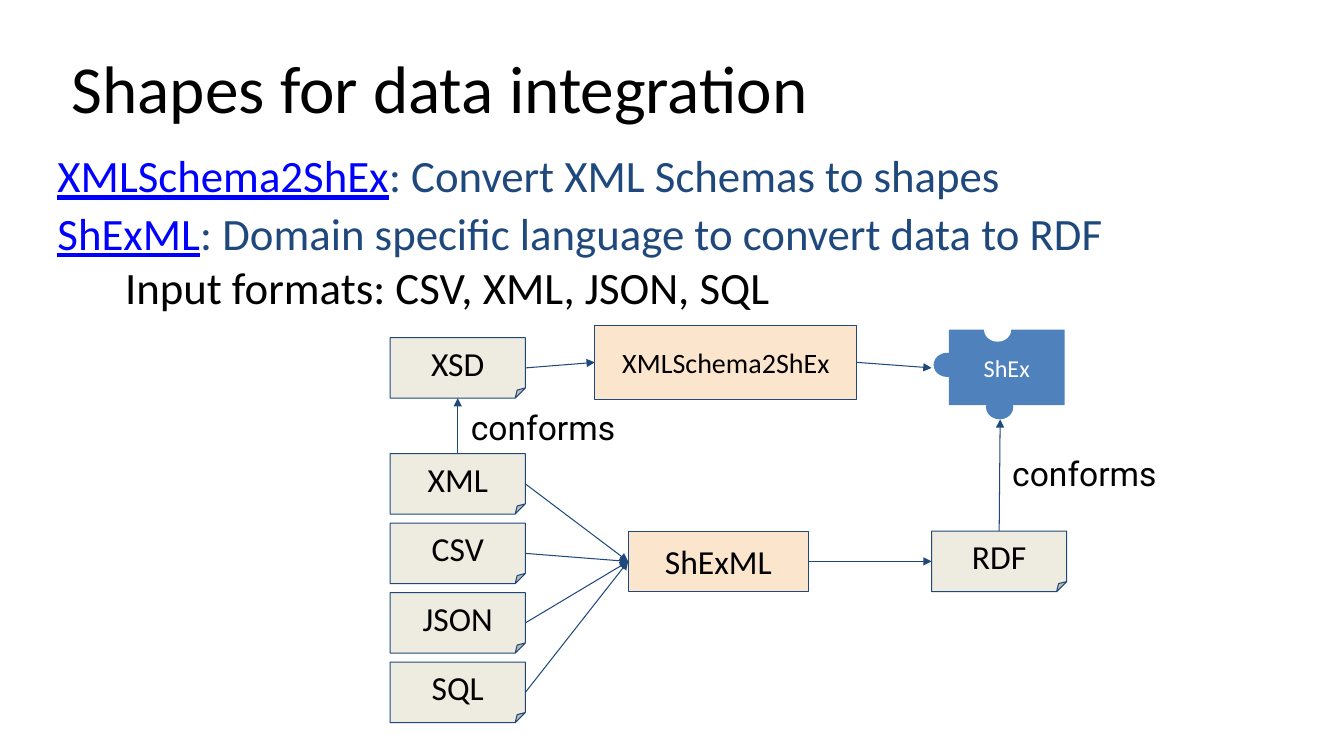
from lxml import etree
from pptx import Presentation
from pptx import util as u
from pptx.dml.color import RGBColor
from pptx.enum import shapes, text
from pptx.oxml.ns import qn

COLORS = {"ink": "000000", "link": "0000FF", "navy": "1F497D", "paper": "EEECE1",
          "tool": "FCE5CD", "puzzle": "4F81BD", "white": "FFFFFF"}
TITLE = "Shapes for data integration"
# (level, space before, [(words, color, underlined)])
BODY = [
    (0, 0, [("XMLSchema2ShEx", "link", True),
            (": Convert XML Schemas to shapes", "navy", False)]),
    (0, 6.7, [("ShExML", "link", True),
              (": Domain specific language to convert data to RDF", "navy", False)]),
    (1, 4, [("Input formats: CSV, XML, JSON, SQL", "ink", False)]),
]
INPUTS = ["XML", "CSV", "JSON", "SQL"]
DOC_W, DOC_H = 1.34, 0.6
DOC_X, RDF_X = 3.87, 9.24
XSD_Y, INPUT_Y, INPUT_PITCH, RDF_Y = 3.35, 4.5, 0.69, 5.27
# name: (left, top, width, height, size)
TOOLS = {"XMLSchema2ShEx": (5.9, 3.23, 2.6, 0.73, 20),
         "ShExML": (6.23, RDF_Y, 1.79, DOC_H, 24)}
PUZZLE_BODY = (9.41, 3.27, 1.15, 0.75)
KNOB_W, KNOB_H = 0.27, 0.24
KNOBS = [(9.78, 3.92, "puzzle"), (9.76, 3.15, "white"), (9.26, 3.5, "puzzle")]
PUZZLE_LEFT, PUZZLE_FOOT = (RDF_X, 3.65), (9.92, 4.16)
CONFORMS = [(9.91, 4.36), (4.54, 3.91)]
TOP, LEFT, BOTTOM, RIGHT = range(4)  # connection sites

prs = Presentation()
prs.slide_width, prs.slide_height = u.Inches(13.33), u.Inches(7.5)
s = prs.slides.add_slide(prs.slide_layouts[5])


def inches(*values):
    return [u.Inches(v) for v in values]


def rgb(name):
    return RGBColor.from_string(COLORS[name])


def frame(sp, across, down, anchor=text.MSO_ANCHOR.TOP):
    tf = sp.text_frame
    tf.word_wrap = True
    tf.auto_size = text.MSO_AUTO_SIZE.NONE
    tf.vertical_anchor = anchor
    tf.margin_left = tf.margin_right = u.Inches(across)
    tf.margin_top = tf.margin_bottom = u.Inches(down)
    return tf


def add_run(p, words, size, color="ink", font="Calibri", underline=False):
    r = p.add_run()
    r.text = words
    r.font.size, r.font.name = u.Pt(size), font
    r.font.color.rgb = rgb(color)
    r.font.underline = underline


def add_block(parent, kind, box, fill, outlined=True):
    sp = parent.add_shape(kind, *inches(*box))
    sp.shadow.inherit = False
    sp.fill.solid()
    sp.fill.fore_color.rgb = rgb(fill)
    if outlined:
        sp.line.color.rgb = rgb("navy")
        sp.line.width = u.Pt(0.75)
    else:
        sp.line.fill.background()
    return sp


def add_label(sp, words, size, color="ink", margins=(0.13, 0.13)):
    p = frame(sp, *margins, text.MSO_ANCHOR.MIDDLE).paragraphs[0]
    p.alignment = text.PP_ALIGN.CENTER
    add_run(p, words, size, color)


def add_document(name, left, top):
    sp = add_block(s.shapes, shapes.MSO_SHAPE.FOLDED_CORNER,
                   (left, top, DOC_W, DOC_H), "paper")
    add_label(sp, name, 24)
    return sp


def add_arrow(start, site, end, end_site=LEFT):
    """Draw an arrow from a shape to another shape or to an (x, y) point."""
    is_point = isinstance(end, tuple)
    x, y = inches(*end) if is_point else (0, 0)
    line = s.shapes.add_connector(shapes.MSO_CONNECTOR.STRAIGHT, 0, 0, x, y)
    line.begin_connect(start, site)
    if not is_point:
        line.end_connect(end, end_site)
    line.line.color.rgb = rgb("navy")
    line.line.width = u.Pt(0.75)
    sp_pr = line._element.spPr
    etree.SubElement(sp_pr.find(qn("a:ln")), qn("a:tailEnd"), type="triangle")
    etree.SubElement(sp_pr, qn("a:effectLst"))


# Title and introduction
title = s.shapes.title
title.left, title.top, title.width, title.height = inches(0.56, 0.45, 12.03, 0.98)
p = frame(title, 0.15, 0.1).paragraphs[0]
p.alignment, p.line_spacing = text.PP_ALIGN.LEFT, 0.9
add_run(p, TITLE, 48)

tf = frame(s.shapes.add_textbox(*inches(0.42, 1.43, 12.41, 1.63)), 0.15, 0.1)
for i, (level, before, runs) in enumerate(BODY):
    p = tf.add_paragraph() if i else tf.paragraphs[0]
    p.level, p.line_spacing, p.space_before = level, 0.9, u.Pt(before)
    p._p.get_or_add_pPr().set("marL", str(u.Inches(0.67 * level)))
    for words, color, underline in runs:
        add_run(p, words, 32, color, underline=underline)

# Diagram nodes
nodes = {"XSD": add_document("XSD", DOC_X, XSD_Y),
         "RDF": add_document("RDF", RDF_X, RDF_Y)}
for row, name in enumerate(INPUTS):
    nodes[name] = add_document(name, DOC_X, INPUT_Y + row * INPUT_PITCH)
for name, (*box, size) in TOOLS.items():
    nodes[name] = add_block(s.shapes, shapes.MSO_SHAPE.RECTANGLE, box, "tool")
    add_label(nodes[name], name, size)

# Arrows and their labels
add_arrow(nodes["XSD"], RIGHT, nodes["XMLSchema2ShEx"])
add_arrow(nodes["XMLSchema2ShEx"], RIGHT, PUZZLE_LEFT)
add_arrow(nodes["RDF"], TOP, PUZZLE_FOOT)
for name in INPUTS:
    add_arrow(nodes[name], RIGHT, nodes["ShExML"])
add_arrow(nodes["ShExML"], RIGHT, nodes["RDF"])
add_arrow(nodes["XML"], TOP, nodes["XSD"], BOTTOM)
for left, top in CONFORMS:
    tf = frame(s.shapes.add_textbox(*inches(left, top, 2.04, 0.51)), 0.13, 0.13)
    add_run(tf.paragraphs[0], "conforms", 24, font="Roboto")

# Puzzle piece
puzzle = s.shapes.add_group_shape().shapes
piece = add_block(puzzle, shapes.MSO_SHAPE.RECTANGLE, PUZZLE_BODY, "puzzle", False)
add_label(piece, "ShEx", 17.3, "white", (0.1, 0.05))
for left, top, fill in KNOBS:
    add_block(puzzle, shapes.MSO_SHAPE.OVAL, (left, top, KNOB_W, KNOB_H), fill, False)

prs.save("out.pptx")
